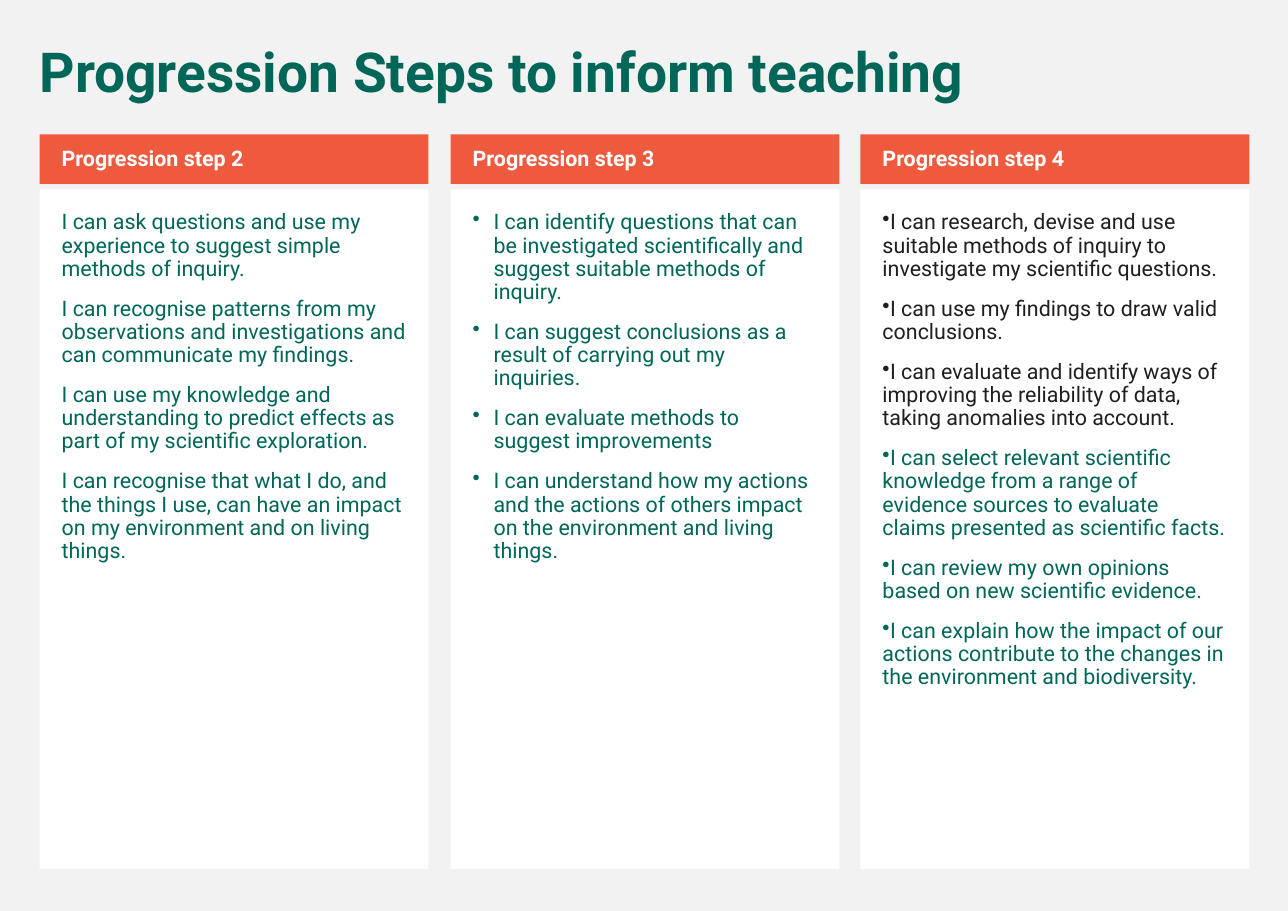
from lxml import etree
from pptx import Presentation
from pptx.dml.color import RGBColor
from pptx.enum.shapes import MSO_SHAPE
from pptx.enum.text import MSO_ANCHOR, PP_ALIGN
from pptx.oxml.ns import qn
from pptx.util import Pt

PX = 9144
RECT = MSO_SHAPE.RECTANGLE
TOP, MIDDLE = MSO_ANCHOR.TOP, MSO_ANCHOR.MIDDLE
LEFT = PP_ALIGN.LEFT

FONT = "Roboto"
GREY, WHITE, ORANGE = "F2F2F2", "FFFFFF", "ED5A3E"
GREEN, BLACK = "006758", "1F1F1F"

COLUMN_W, HEADER_Y, HEADER_H, BODY_Y, BODY_H = 353, 122, 45, 172, 617

COLUMNS = [
    (36, "Progression step 2", None, 0, [
        "I can ask questions and use my experience to suggest simple methods of inquiry.",
        "I can recognise patterns from my observations and investigations and can communicate my findings.",
        "I can use my knowledge and understanding to predict effects as part of my scientific exploration.",
        "I can recognise that what I do, and the things I use, can have an impact on my environment "
        "and on living things.",
    ]),
    (409, "Progression step 3", 19, 0, [
        "I can identify questions that can be investigated scientifically and suggest suitable methods of inquiry.",
        "I can suggest conclusions as a result of carrying out my inquiries.",
        "I can evaluate methods to suggest improvements",
        "I can understand how my actions and the actions of others impact on the environment and living things.",
    ]),
    (781, "Progression step 4", 0, 3, [
        "I can research, devise and use suitable methods of inquiry to investigate my scientific questions.",
        "I can use my findings to draw valid conclusions.",
        "I can evaluate and identify ways of improving the reliability of data, taking anomalies into account.",
        "I can select relevant scientific knowledge from a range of evidence sources to evaluate claims "
        "presented as scientific facts.",
        "I can review my own opinions based on new scientific evidence.",
        "I can explain how the impact of our actions contribute to the changes in the environment and biodiversity.",
    ]),
]


def px(n):
    return n * PX


def rgb(value):
    return RGBColor.from_string(value)


def set_frame(sp, anchor, insets):
    tf = sp.text_frame
    tf.word_wrap = True
    tf.vertical_anchor = anchor
    tf.margin_left, tf.margin_top, tf.margin_right, tf.margin_bottom = map(px, insets)
    return tf


def format_paragraph(p, size, color, bold=False):
    p.alignment = LEFT
    p.line_spacing = 0.9
    p.space_before = Pt(11)
    for r in p.runs:
        r.font.name = FONT
        r.font.size = Pt(size)
        r.font.bold = bold
        r.font.color.rgb = rgb(color)


def add_bullet(p, indent):
    pPr = p._p.get_or_add_pPr()
    pPr.set("marL", str(px(indent)))
    pPr.set("indent", str(-px(indent)))
    etree.SubElement(pPr, qn("a:buChar"), char="•")


def add_panel(s, x, y, h, fill):
    sp = s.shapes.add_shape(RECT, px(x), px(y), px(COLUMN_W), px(h))
    sp.shadow.inherit = False
    sp.fill.solid()
    sp.fill.fore_color.rgb = rgb(fill)
    sp.line.fill.background()
    return sp


def add_header(s, x, text):
    tf = set_frame(add_panel(s, x, HEADER_Y, HEADER_H, ORANGE), MIDDLE, (20, 5, 10, 5))
    tf.text = text
    format_paragraph(tf.paragraphs[0], 14, WHITE, True)


def add_statements(s, x, statements, indent, black_count):
    tf = set_frame(add_panel(s, x, BODY_Y, BODY_H, WHITE), TOP, (20, 20, 20, 20))
    tf.text = "\n".join(statements)
    for i, p in enumerate(tf.paragraphs):
        format_paragraph(p, 14, BLACK if i < black_count else GREEN)
        if indent is not None:
            add_bullet(p, indent)


def add_title(s, text):
    sp = s.shapes.add_textbox(px(26), px(36), px(1108), px(65))
    tf = set_frame(sp, TOP, (10, 5, 10, 5))
    tf.text = text
    format_paragraph(tf.paragraphs[0], 36, GREEN, True)


def main():
    prs = Presentation()
    prs.slide_width, prs.slide_height = px(1169), px(827)
    s = prs.slides.add_slide(prs.slide_layouts[6])
    s.background.fill.solid()
    s.background.fill.fore_color.rgb = rgb(GREY)
    for x, heading, indent, black_count, statements in COLUMNS:
        add_statements(s, x, statements, indent, black_count)
        add_header(s, x, heading)
    add_title(s, "Progression Steps to inform teaching")
    prs.save("out.pptx")


if __name__ == "__main__":
    main()
